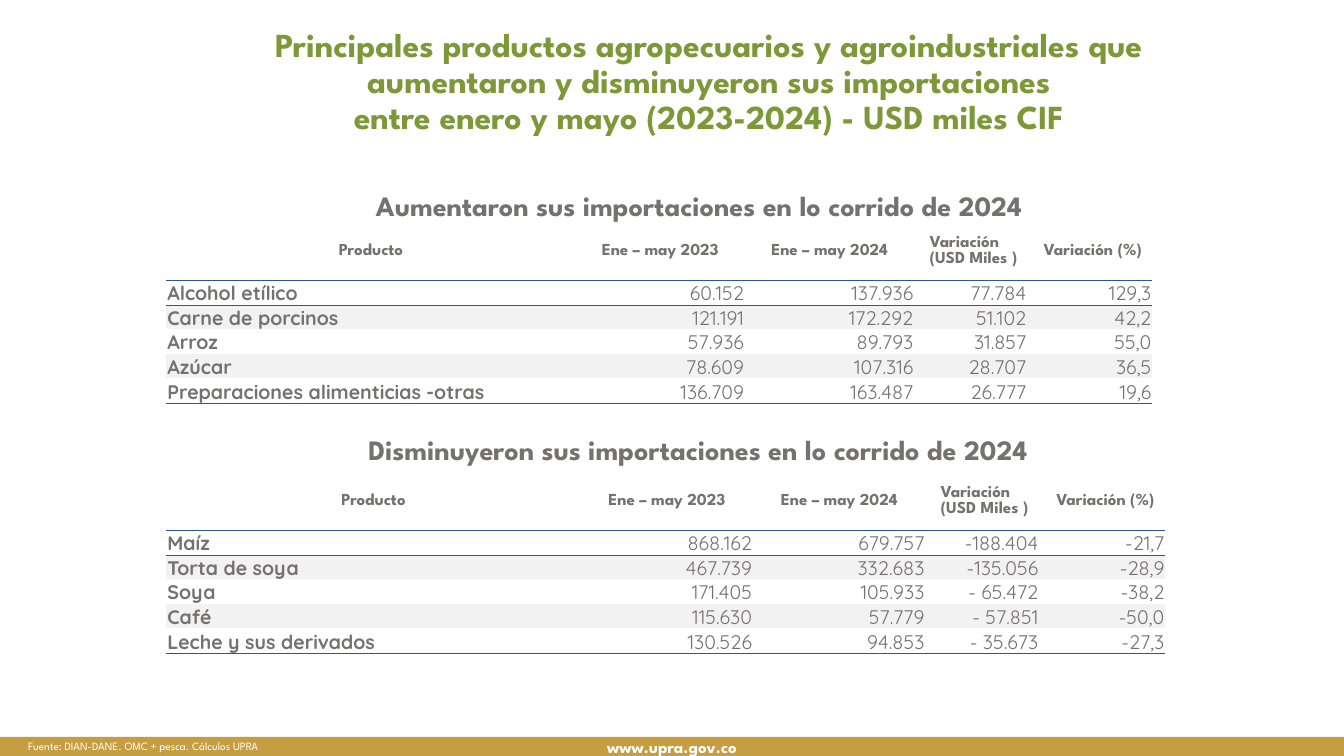
"""Build the slide of agricultural imports that rose and fell, January to May 2023-2024."""
from dataclasses import dataclass

from lxml.etree import SubElement
from pptx import Presentation
from pptx.dml.color import RGBColor
from pptx.enum.shapes import MSO_SHAPE as Shape
from pptx.enum.text import MSO_ANCHOR as Anchor, MSO_AUTO_SIZE as AutoSize, PP_ALIGN as Align
from pptx.oxml.ns import qn
from pptx.util import Inches, Pt


@dataclass(frozen=True)
class Theme:
    heading_font: str = "League Spartan"
    body_font: str = "Quicksand"
    green: str = "7D9837"
    gold: str = "C59E41"
    white: str = "FFFFFF"
    grey: str = "767171"
    body_grey: str = "757171"
    band: str = "F2F2F2"
    rule: str = "2F5597"
    rule_width: float = 0.25
    title_size: int = 24
    subtitle_size: int = 20
    body_size: int = 14
    header_size: int = 12
    source_size: int = 8


THEME = Theme()
NO_STYLE = "{2D5ABB26-0587-4C30-8999-92F81FD0307C}"
SLIDE_SIZE = (13.33, 7.5)

TITLE = ("Principales productos agropecuarios y agroindustriales que aumentaron y "
         "disminuyeron sus importaciones\ventre enero y mayo (2023-2024) - USD miles CIF")
SITE = "www.upra.gov.co"
SOURCE = "Fuente: DIAN-DANE. OMC + pesca. Cálculos UPRA"
HEADERS = ("Producto", "Ene – may 2023", "Ene – may 2024", "Variación\v(USD Miles )", "Variación (%)")
CHANGE_COLUMN = 3
HEADER_HEIGHT, ROW_HEIGHT = 0.58, 0.24

SECTIONS = [
    {
        "heading": "Aumentaron sus importaciones en lo corrido de 2024",
        "heading_box": (2.18, 1.82, 9.51, 0.44),
        "corner": (1.65, 2.2),
        "widths": (4.06, 1.68, 1.68, 1.18, 1.18),
        "products": [
            ("Alcohol etílico", "60.152", "137.936", "77.784", "129,3"),
            ("Carne de porcinos", "121.191", "172.292", "51.102", "42,2"),
            ("Arroz", "57.936", "89.793", "31.857", "55,0"),
            ("Azúcar", "78.609", "107.316", "28.707", "36,5"),
            ("Preparaciones alimenticias -otras", "136.709", "163.487", "26.777", "19,6"),
        ],
    },
    {
        "heading": "Disminuyeron sus importaciones en lo corrido de 2024",
        "heading_box": (1.78, 4.24, 10.29, 0.44),
        "corner": (1.65, 4.68),
        "widths": (4.11, 1.71, 1.71, 1.19, 1.19),
        "products": [
            ("Maíz", "868.162", "679.757", "-188.404", "-21,7"),
            ("Torta de soya", "467.739", "332.683", "-135.056", "-28,9"),
            ("Soya", "171.405", "105.933", "- 65.472", "-38,2"),
            ("Café", "115.630", "57.779", "- 57.851", "-50,0"),
            ("Leche y sus derivados", "130.526", "94.853", "- 35.673", "-27,3"),
        ],
    },
]


def write(frame, text, size, color, font=THEME.heading_font, bold=True, align=Align.CENTER, spacing=None):
    paragraph = frame.paragraphs[0]
    paragraph.text = text
    paragraph.alignment = align
    if spacing:
        paragraph.line_spacing = spacing
    for run in paragraph.runs:
        run.font.name = font
        run.font.size = Pt(size)
        run.font.bold = bold
        run.font.color.rgb = RGBColor.from_string(color)


def add_label(slide, box, text, size, color, **style):
    frame = slide.shapes.add_textbox(*map(Inches, box)).text_frame
    frame.word_wrap = True
    write(frame, text, size, color, **style)


def add_rule(cell, side):
    line = SubElement(cell._tc.get_or_add_tcPr(), qn(f"a:{side}"), w=str(Pt(THEME.rule_width)))
    SubElement(SubElement(line, qn("a:solidFill")), qn("a:srgbClr"), val=THEME.rule)


def fill_cell(cell, text, row, column, last_row):
    header, change = row == 0, column == CHANGE_COLUMN
    cell.margin_left = Inches(0.15 if header and change else 0.01)
    cell.margin_right = Inches(0.07 if change and not header else 0.01)
    cell.margin_top, cell.margin_bottom = Inches(0.01), 0
    cell.vertical_anchor = Anchor.BOTTOM if column == 0 and not header else Anchor.MIDDLE
    if row == 1:
        add_rule(cell, "lnT")
    if row in (0, last_row):
        add_rule(cell, "lnB")
    if row and row % 2 == 0:
        cell.fill.solid()
        cell.fill.fore_color.rgb = RGBColor.from_string(THEME.band)
    else:
        cell.fill.background()
    if header:
        write(cell.text_frame, text, THEME.header_size, THEME.grey,
              align=Align.LEFT if change else Align.CENTER)
    else:
        write(cell.text_frame, text, THEME.body_size, THEME.body_grey, font=THEME.body_font,
              bold=column == 0, align=Align.RIGHT if column else Align.LEFT)


def add_section(slide, section):
    add_label(slide, section["heading_box"], section["heading"], THEME.subtitle_size, THEME.grey)
    rows = [HEADERS, *section["products"]]
    heights = [HEADER_HEIGHT] + [ROW_HEIGHT] * len(section["products"])
    extent = (*section["corner"], sum(section["widths"]), sum(heights))
    table = slide.shapes.add_table(len(rows), len(HEADERS), *map(Inches, extent)).table
    table.first_row = table.horz_banding = False
    table._tbl.tblPr.find(qn("a:tableStyleId")).text = NO_STYLE
    for column, width in zip(table.columns, section["widths"]):
        column.width = Inches(width)
    for row, height in zip(table.rows, heights):
        row.height = Inches(height)
    for row, values in enumerate(rows):
        for column, value in enumerate(values):
            fill_cell(table.cell(row, column), value, row, column, len(rows) - 1)


def add_title(slide):
    title = slide.shapes.title
    title.left, title.top, title.width, title.height = map(Inches, (2.11, 0.23, 9.84, 1.07))
    frame = title.text_frame
    frame.word_wrap = True
    frame.auto_size = AutoSize.NONE
    frame.vertical_anchor = Anchor.TOP
    write(frame, TITLE, THEME.title_size, THEME.green, spacing=0.9)


def add_footer(slide):
    footer = slide.shapes.add_shape(Shape.RECTANGLE, *map(Inches, (0, 7.31, 13.33, 0.19)))
    footer.shadow.inherit = False
    footer.fill.solid()
    footer.fill.fore_color.rgb = RGBColor.from_string(THEME.gold)
    footer.line.fill.background()
    footer.text_frame.vertical_anchor = Anchor.MIDDLE
    write(footer.text_frame, SITE, THEME.header_size, THEME.white)
    add_label(slide, (0.18, 7.29, 12.91, 0.24), SOURCE, THEME.source_size, THEME.white,
              bold=False, align=Align.JUSTIFY)


def main():
    deck = Presentation()
    deck.slide_width, deck.slide_height = map(Inches, SLIDE_SIZE)
    slide = deck.slides.add_slide(deck.slide_layouts[5])
    add_title(slide)
    add_footer(slide)
    for section in SECTIONS:
        add_section(slide, section)
    deck.save("out.pptx")


if __name__ == "__main__":
    main()
